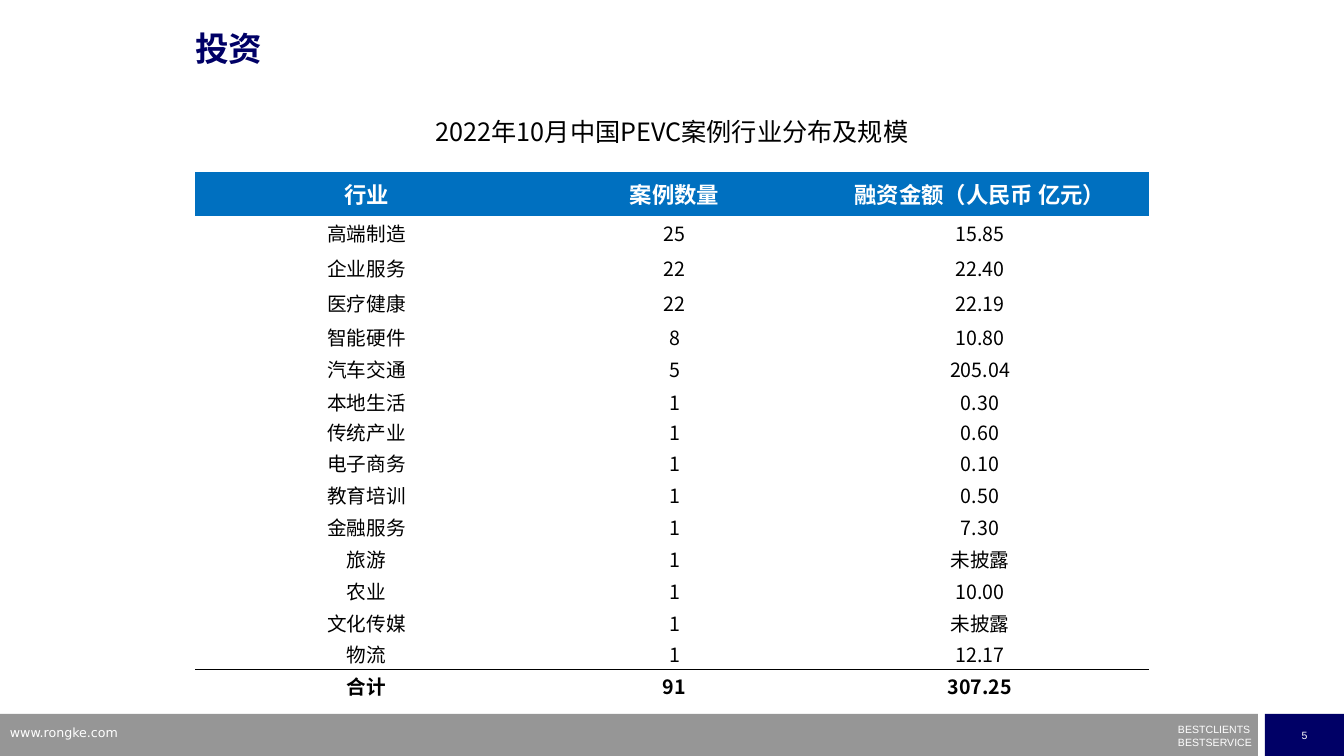
from lxml import etree
from pptx import Presentation
from pptx.dml.color import RGBColor
from pptx.enum.shapes import MSO_SHAPE
from pptx.enum.text import MSO_ANCHOR, MSO_AUTO_SIZE, PP_ALIGN
from pptx.oxml.ns import qn
from pptx.util import Pt

LEFT, MID = PP_ALIGN.LEFT, PP_ALIGN.CENTER
TOP, CENTER, BOTTOM = MSO_ANCHOR.TOP, MSO_ANCHOR.MIDDLE, MSO_ANCHOR.BOTTOM
FIXED = MSO_AUTO_SIZE.NONE
RECT = MSO_SHAPE.RECTANGLE

PX = 914400 / 100.8
THEME = {
    "navy": RGBColor(0, 0, 102),
    "gray": RGBColor(150, 150, 150),
    "blue": RGBColor(0, 112, 192),
    "white": RGBColor(255, 255, 255),
    "black": RGBColor(0, 0, 0),
    "cjk": "Noto Sans CJK SC",
    "title": 24,
    "caption": 18,
    "head": 16,
    "body": 14,
    "site": 9,
    "foot": 7.5,
}


def px(*vals):
    return [round(v * PX) for v in vals]


def put(frame, text, size="body", color="black", bold=False, face=THEME["cjk"],
        align=LEFT, line=1.0):
    frame.text = text
    for para in frame.paragraphs:
        para.alignment = align
        para.line_spacing = line
        for run in para.runs:
            font = run.font
            font.size = Pt(THEME[size])
            font.bold = bold
            font.color.rgb = THEME[color]
            font.name = face
            asian = etree.SubElement(font._element, qn("a:ea"))
            asian.set("typeface", face)


deck = Presentation()
deck.slide_width, deck.slide_height = px(1344, 756)
slide = deck.slides.add_slide(deck.slide_layouts[5])
shapes = slide.shapes

bars = []
for x, w, color in [(0, 1258, "gray"), (1265, 79, "navy")]:
    bar = shapes.add_shape(RECT, *px(x, 714, w, 42))
    bar.shadow.inherit = False
    bar.fill.solid()
    bar.fill.fore_color.rgb = THEME[color]
    bar.line.fill.background()
    bars.append(bar)
page = bars[1].text_frame
page.vertical_anchor = CENTER
put(page, "5", size="foot", color="white", face="Arial", align=MID)

motto = shapes.add_textbox(*px(1178, 723, 78, 24)).text_frame
motto.margin_left = motto.margin_right = motto.margin_top = motto.margin_bottom = 0
motto.word_wrap = True
put(motto, "BESTCLIENTS\nBESTSERVICE", size="foot", color="white", face="Arial")

site = shapes.add_textbox(*px(0, 720, 323, 26)).text_frame
site.word_wrap = True
put(site, "www.rongke.com", size="site", color="white", face="DejaVu Sans")

title = shapes.title
title.left, title.top, title.width, title.height = px(195, 30, 907, 39)
frame = title.text_frame
frame.margin_left = frame.margin_right = frame.margin_top = frame.margin_bottom = 0
frame.auto_size = FIXED
frame.vertical_anchor = BOTTOM
put(frame, "投资", size="title", color="navy", bold=True, line=0.9)

rows = [
    ("2022年10月中国PEVC案例行业分布及规模", "", ""),
    ("行业", "案例数量", "融资金额（人民币 亿元）"),
    ("高端制造", "25", "15.85"),
    ("企业服务", "22", "22.40"),
    ("医疗健康", "22", "22.19"),
    ("智能硬件", "8", "10.80"),
    ("汽车交通", "5", "205.04"),
    ("本地生活", "1", "0.30"),
    ("传统产业", "1", "0.60"),
    ("电子商务", "1", "0.10"),
    ("教育培训", "1", "0.50"),
    ("金融服务", "1", "7.30"),
    ("旅游", "1", "未披露"),
    ("农业", "1", "10.00"),
    ("文化传媒", "1", "未披露"),
    ("物流", "1", "12.17"),
    ("合计", "91", "307.25"),
]
tall = [60, 44] + [35] * 3 + [32, 33, 32, 29] + [32] * 6 + [31, 33]
wide = [343, 273, 338]
last = len(rows) - 1
edges = {last - 1: "a:lnB", last: "a:lnT"}

grid = shapes.add_table(len(rows), 3, *px(195, 112, sum(wide), sum(tall))).table
grid.first_row = grid.horz_banding = False
style = grid._tbl.tblPr.find(qn("a:tableStyleId"))
style.text = "{2D5ABB26-0587-4C30-8999-92F81FD0307C}"
for col, w in zip(grid.columns, px(*wide)):
    col.width = w
for row, h in zip(grid.rows, px(*tall)):
    row.height = h
grid.cell(0, 0).merge(grid.cell(0, 2))

looks = {
    0: {"size": "caption"},
    1: {"size": "head", "color": "white", "bold": True},
    last: {"bold": True},
}
for r, row in enumerate(rows):
    for c, text in enumerate(row):
        cell = grid.cell(r, c)
        cell.margin_left = cell.margin_right = cell.margin_top = cell.margin_bottom = 0
        cell.vertical_anchor = CENTER if r else TOP
        if r:
            cell.fill.solid()
            cell.fill.fore_color.rgb = THEME["blue" if r == 1 else "white"]
        if text:
            put(cell.text_frame, text, align=MID, **looks.get(r, {}))
        if r in edges:
            edge = etree.Element(qn(edges[r]), w=str(Pt(1)))
            fill = etree.SubElement(edge, qn("a:solidFill"))
            etree.SubElement(fill, qn("a:srgbClr"), val=str(THEME["black"]))
            cell._tc.tcPr.insert(0, edge)

deck.save("out.pptx")
